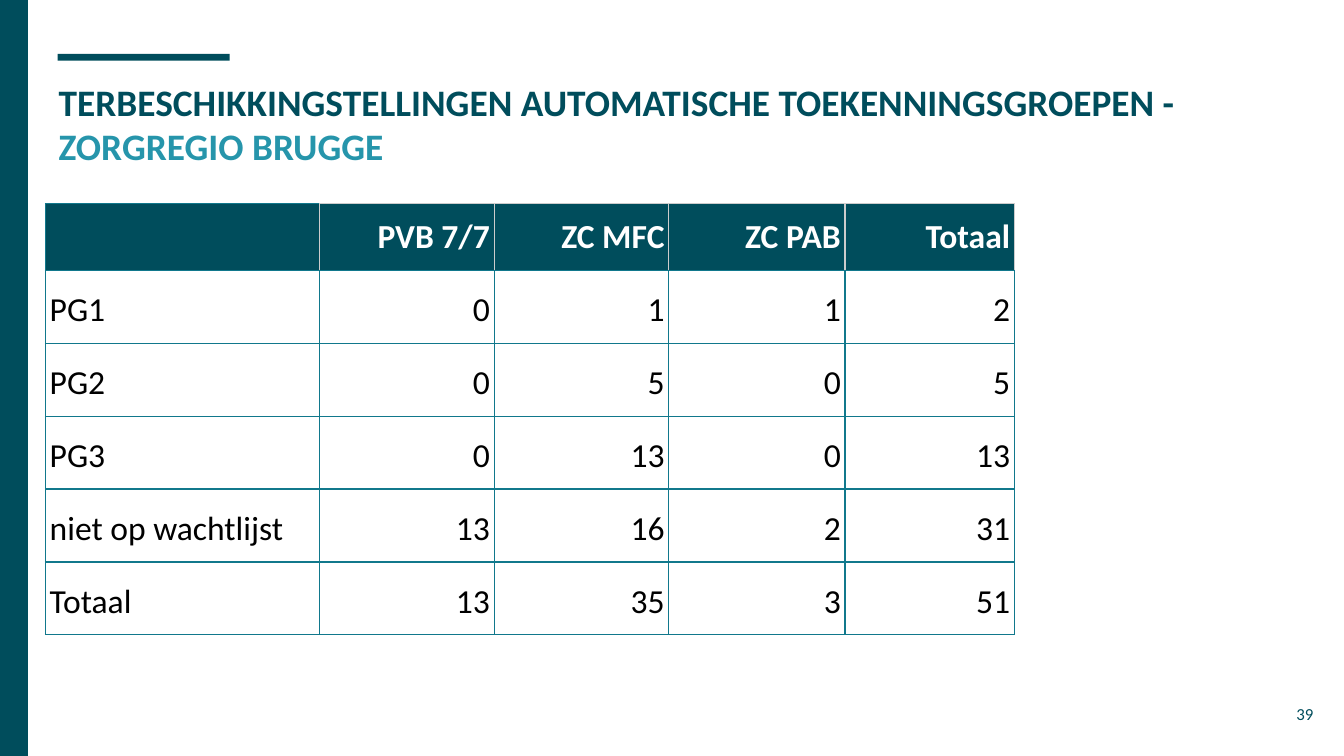
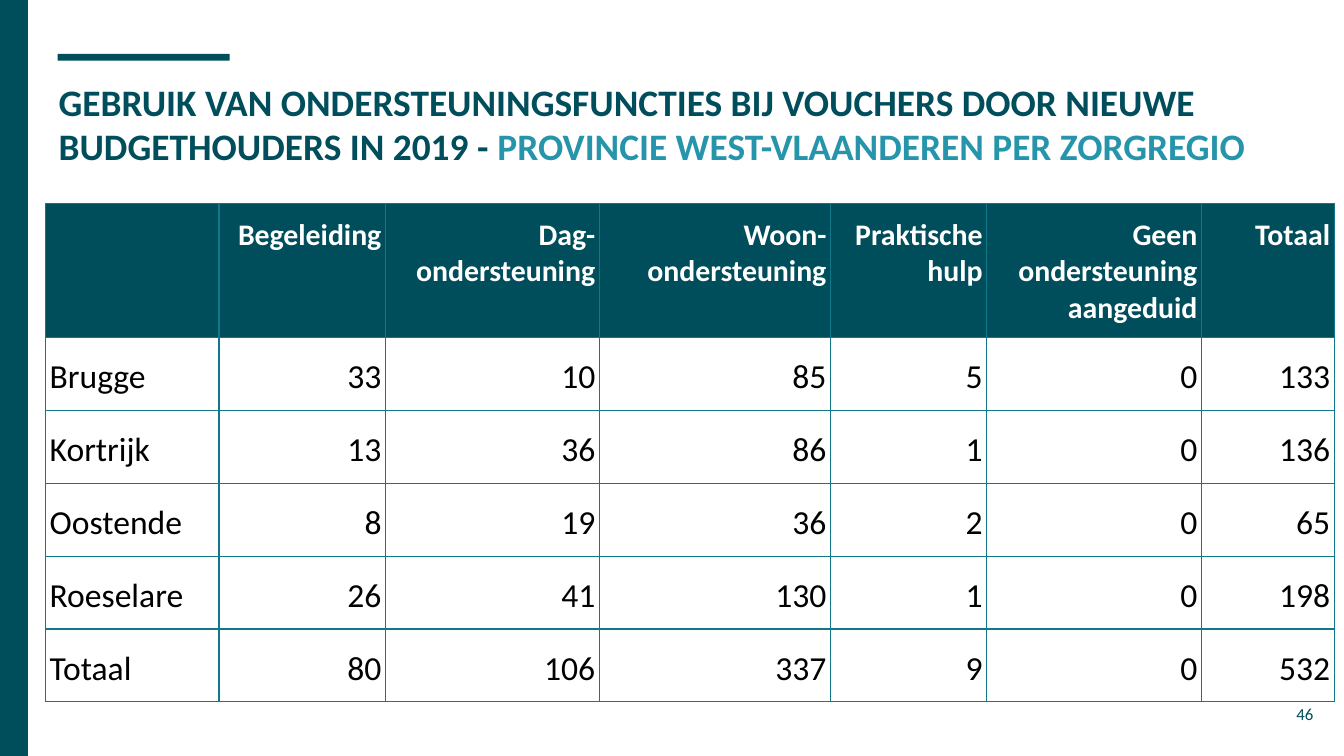
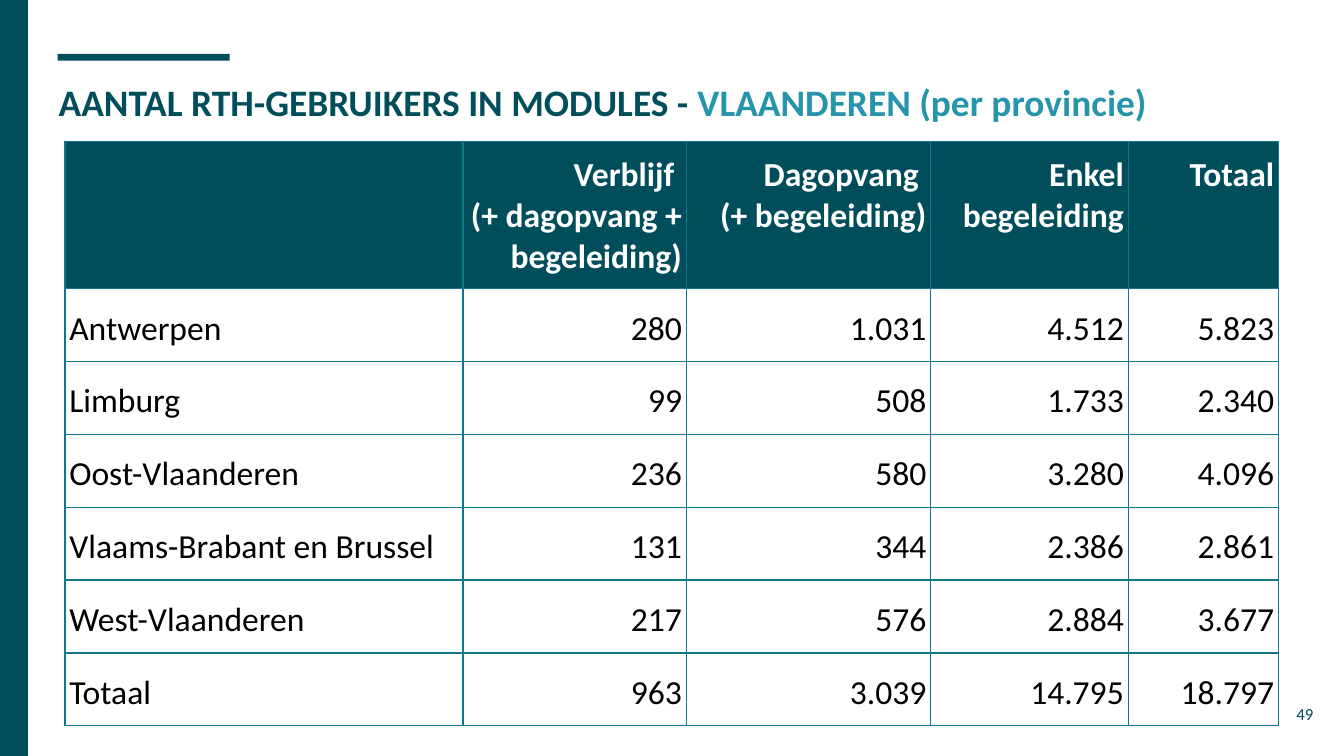
from dataclasses import dataclass

from lxml import etree
from pptx import Presentation
from pptx.dml.color import RGBColor
from pptx.enum.shapes import MSO_SHAPE
from pptx.enum.text import MSO_ANCHOR, PP_ALIGN
from pptx.oxml.ns import qn
from pptx.util import Cm, Pt

LEFT, RIGHT = PP_ALIGN.LEFT, PP_ALIGN.RIGHT
TOP, MIDDLE, BOTTOM = MSO_ANCHOR.TOP, MSO_ANCHOR.MIDDLE, MSO_ANCHOR.BOTTOM
RECTANGLE = MSO_SHAPE.RECTANGLE


@dataclass(frozen=True)
class Theme:
    font: str = "Calibri"
    dark: str = "004D5C"
    accent: str = "2695AB"
    grid: str = "11788C"
    header_grid: str = "CCCCCC"
    white: str = "FFFFFF"
    black: str = "000000"
    title_size: int = 20
    body_size: int = 18
    number_size: int = 9
    border_width: float = 0.75
    body_spacing: float = 1.15


THEME = Theme()

# Content: lengths in centimetres, a line break in a cell starts a paragraph
SLIDES = [
    {
        "title": "TERBESCHIKKINGSTELLINGEN AUTOMATISCHE TOEKENNINGSGROEPEN - ",
        "subject": "ZORGREGIO BRUGGE",
        "number": "39",
        "corner": (0.86, 3.85),
        "columns": [5.18, 3.3, 3.3, 3.33, 3.2],
        "header_height": 1.25,
        "header_size": 18,
        "header_grid": THEME.header_grid,
        "rows": [
            ["", "PVB 7/7", "ZC MFC", "ZC PAB", "Totaal"],
            ["PG1", "0", "1", "1", "2"],
            ["PG2", "0", "5", "0", "5"],
            ["PG3", "0", "13", "0", "13"],
            ["niet op wachtlijst", "13", "16", "2", "31"],
            ["Totaal", "13", "35", "3", "51"],
        ],
    },
    {
        "title": "GEBRUIK VAN ONDERSTEUNINGSFUNCTIES BIJ VOUCHERS DOOR NIEUWE "
                 "BUDGETHOUDERS IN 2019 - ",
        "subject": "PROVINCIE WEST-VLAANDEREN PER ZORGREGIO",
        "number": "46",
        "corner": (0.86, 3.85),
        "columns": [3.28, 3.15, 4.04, 4.37, 2.95, 4.06, 2.51],
        "header_height": 2.36,
        "header_size": 16,
        "header_grid": THEME.grid,
        "rows": [
            ["", "Begeleiding", "Dag-\nondersteuning", "Woon-\nondersteuning",
             "Praktische\nhulp", "Geen ondersteuning aangeduid", "Totaal"],
            ["Brugge", "33", "10", "85", "5", "0", "133"],
            ["Kortrijk", "13", "36", "86", "1", "0", "136"],
            ["Oostende", "8", "19", "36", "2", "0", "65"],
            ["Roeselare", "26", "41", "130", "1", "0", "198"],
            ["Totaal", "80", "106", "337", "9", "0", "532"],
        ],
    },
    {
        "title": "AANTAL RTH-GEBRUIKERS IN MODULES - ",
        "subject": "VLAANDEREN (per provincie)",
        "number": "49",
        "corner": (1.23, 2.67),
        "columns": [7.52, 4.22, 4.62, 3.73, 2.84],
        "header_height": 1.25,
        "header_size": 18,
        "header_grid": THEME.grid,
        "rows": [
            ["", "Verblijf \n(+ dagopvang + begeleiding)", "Dagopvang \n(+ begeleiding)",
             "Enkel begeleiding", "Totaal"],
            ["Antwerpen", "280", "1.031", "4.512", "5.823"],
            ["Limburg", "99", "508", "1.733", "2.340"],
            ["Oost-Vlaanderen", "236", "580", "3.280", "4.096"],
            ["Vlaams-Brabant en Brussel", "131", "344", "2.386", "2.861"],
            ["West-Vlaanderen", "217", "576", "2.884", "3.677"],
            ["Totaal", "963", "3.039", "14.795", "18.797"],
        ],
    },
]

SLIDE_SIZE = (25.4, 14.29)
BARS = [(1.09, 1.02, 3.25, 0.13), (0, 0, 0.53, 14.29)]
TITLE_AREA = (0.86, 1.24, 23.67, 2.11)
NUMBER_AREA = (23.55, 12.95, 1.52, 1.09)
ROW_HEIGHT = 1.25
INSET = 0.25
CELL_SIDE_INSET = 0.08


def write_text(frame, paragraphs, *, size, bold=False, align=LEFT, spacing=None):
    """Fill a text frame; each paragraph is a list of (text, colour) spans."""
    for index, spans in enumerate(paragraphs):
        para = frame.add_paragraph() if index else frame.paragraphs[0]
        para.alignment = align
        if spacing:
            para.line_spacing = spacing
        para.font.size = Pt(size)
        for text, colour in spans:
            span = para.add_run()
            span.text = text
            span.font.name = THEME.font
            span.font.size = Pt(size)
            span.font.bold = bold
            span.font.color.rgb = RGBColor.from_string(colour)


def add_text_box(slide, area, spans, *, anchor=TOP, **text_format):
    frame = slide.shapes.add_textbox(*map(Cm, area)).text_frame
    frame.word_wrap = True
    frame.vertical_anchor = anchor
    frame.margin_left = frame.margin_right = Cm(INSET)
    frame.margin_top = frame.margin_bottom = Cm(INSET)
    write_text(frame, [spans], **text_format)


def add_bar(slide, area):
    bar = slide.shapes.add_shape(RECTANGLE, *map(Cm, area))
    bar.shadow.inherit = False
    bar.fill.solid()
    bar.fill.fore_color.rgb = RGBColor.from_string(THEME.dark)
    bar.line.fill.background()


def set_borders(cell, left, right, top, bottom):
    properties = cell._tc.get_or_add_tcPr()
    edges = zip(("a:lnL", "a:lnR", "a:lnT", "a:lnB"), (left, right, top, bottom))
    for index, (tag, colour) in enumerate(edges):
        line = etree.Element(qn(tag), w=str(Pt(THEME.border_width)))
        fill = etree.SubElement(line, qn("a:solidFill"))
        etree.SubElement(fill, qn("a:srgbClr"), val=colour)
        properties.insert(index, line)


def format_cell(cell, text, is_header, is_first, content):
    cell.margin_left = cell.margin_right = Cm(CELL_SIDE_INSET)
    cell.margin_top = cell.margin_bottom = Cm(INSET)
    cell.vertical_anchor = TOP if is_header else BOTTOM
    if is_header:
        cell.fill.solid()
        cell.fill.fore_color.rgb = RGBColor.from_string(THEME.dark)
    else:
        cell.fill.background()
    side = content["header_grid"] if is_header else THEME.grid
    set_borders(cell, THEME.grid if is_first else side, side,
                side if is_header and not is_first else THEME.grid, THEME.grid)
    colour = THEME.white if is_header else THEME.black
    write_text(
        cell.text_frame,
        [[(line, colour)] if line else [] for line in text.split("\n")],
        size=content["header_size"] if is_header else THEME.body_size,
        bold=is_header,
        align=LEFT if is_first else RIGHT,
        spacing=None if is_header else THEME.body_spacing,
    )


def add_figures(slide, content):
    rows, columns = content["rows"], content["columns"]
    heights = [content["header_height"]] + [ROW_HEIGHT] * (len(rows) - 1)
    area = (*content["corner"], sum(columns), sum(heights))
    table = slide.shapes.add_table(len(rows), len(columns), *map(Cm, area)).table
    table.horz_banding = False
    for column, width in zip(table.columns, columns):
        column.width = Cm(width)
    for row, height in zip(table.rows, heights):
        row.height = Cm(height)
    for row_index, values in enumerate(rows):
        for column_index, value in enumerate(values):
            format_cell(table.cell(row_index, column_index), value,
                        row_index == 0, column_index == 0, content)


def add_frame(slide, content):
    """Bars, title and slide number, shared by all slides."""
    for area in BARS:
        add_bar(slide, area)
    add_text_box(slide, TITLE_AREA,
                 [(content["title"], THEME.dark), (content["subject"], THEME.accent)],
                 size=THEME.title_size, bold=True)
    add_text_box(slide, NUMBER_AREA, [(content["number"], THEME.dark)],
                 size=THEME.number_size, align=RIGHT, anchor=MIDDLE)


def main():
    deck = Presentation()
    deck.slide_width, deck.slide_height = map(Cm, SLIDE_SIZE)
    blank = deck.slide_layouts[6]
    for content in SLIDES:
        slide = deck.slides.add_slide(blank)
        add_frame(slide, content)
        add_figures(slide, content)
    deck.save("out.pptx")


if __name__ == "__main__":
    main()
